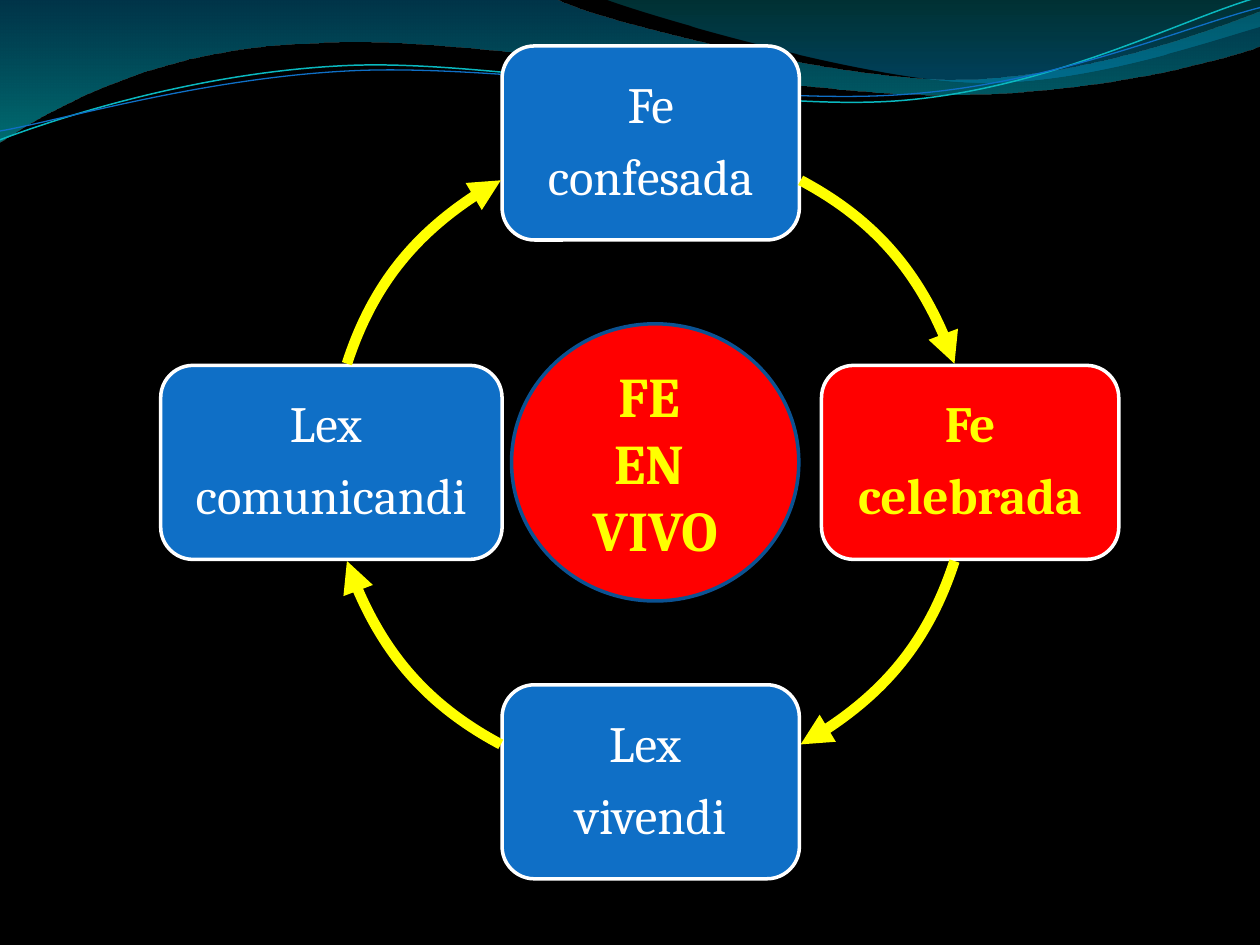
from dataclasses import dataclass
from math import cos, radians, sin, tan

from lxml.etree import SubElement
from pptx import Presentation
from pptx.dml.color import RGBColor as RGB
from pptx.enum.shapes import MSO_SHAPE as SHAPE
from pptx.enum.text import MSO_ANCHOR as ANCHOR, PP_ALIGN as ALIGN
from pptx.oxml.ns import qn
from pptx.util import Inches, Pt


@dataclass(frozen=True)
class Theme:
    font: str = "Cambria"
    back: str = "000000"
    blue: str = "0F6FC6"
    navy: str = "0B5292"
    teal: str = "0AB8BF"
    red: str = "FF0000"
    yellow: str = "FFFF00"
    white: str = "FFFFFF"
    box_size: float = 29
    hub_size: float = 32
    outline: float = 2
    arrow: float = 6


COLS, ROWS = 100, 75
CENTER = (51.65, 36.7)
RADIUS = 25.35
RING = (CENTER[0] - RADIUS, CENTER[1] - RADIUS, 2 * RADIUS, 2 * RADIUS)


def on_ring(degrees, pull=0):
    a = radians(degrees)
    return (CENTER[0] + RADIUS * (cos(a) - pull * sin(a)),
            CENTER[1] + RADIUS * (sin(a) + pull * cos(a)))


def ring_arc(start, sweep):
    pull = 4 / 3 * tan(radians(sweep) / 4)
    end = start + sweep
    return [on_ring(start),
            (*on_ring(start, pull), *on_ring(end, -pull), *on_ring(end))]


def turn(point, center, degrees):
    a = radians(degrees)
    dx, dy = point[0] - center[0], point[1] - center[1]
    return (center[0] + dx * cos(a) - dy * sin(a),
            center[1] + dx * sin(a) + dy * cos(a))


class Canvas:
    def __init__(self, prs, theme):
        self.theme = theme
        self.cell_w = prs.slide_width / COLS
        self.cell_h = prs.slide_height / ROWS
        self.slide = prs.slides.add_slide(prs.slide_layouts[6])
        fill = self.slide.background.fill
        fill.solid()
        fill.fore_color.rgb = RGB.from_string(theme.back)

    def emu(self, col, row):
        return round(col * self.cell_w), round(row * self.cell_h)

    def outline(self, sp, color, width):
        sp.line.color.rgb = RGB.from_string(color)
        sp.line.width = Pt(width)

    def freeform(self, frame, segments, closed=False, rotation=0):
        left, top, width, height = frame
        builder = self.slide.shapes.build_freeform(*self.emu(left, top))
        builder.add_line_segments([self.emu(left + width, top + height)], close=False)
        sp = builder.convert_to_shape()
        sp.shadow.inherit = False
        sp.rotation = rotation
        center = (left + width / 2, top + height / 2)
        outline = sp._element.find(".//" + qn("a:path"))
        for child in list(outline):
            outline.remove(child)
        for i, seg in enumerate(segments):
            tag = "a:moveTo" if i == 0 else "a:lnTo" if len(seg) == 2 else "a:cubicBezTo"
            step = SubElement(outline, qn(tag))
            for point in zip(seg[::2], seg[1::2]):
                col, row = turn(point, center, -rotation)
                x, y = self.emu(col - left, row - top)
                SubElement(step, qn("a:pt"), x=str(x), y=str(y))
        if closed:
            SubElement(outline, qn("a:close"))
        return sp

    def wave(self, frame, segments, stops):
        sp = self.freeform(frame, segments, closed=True)
        sp.fill.gradient()
        sp.fill.gradient_angle = 270
        for stop, (position, color, _) in zip(sp.fill.gradient_stops, stops):
            stop.position = position
            stop.color.rgb = RGB.from_string(color)
        for clr, (_, _, alpha) in zip(sp._element.iter(qn("a:srgbClr")), stops):
            SubElement(clr, qn("a:alpha"), val=str(alpha * 1000))
        sp.line.fill.background()

    def curve(self, frame, segments, color, width, rotation=0, arrow=False):
        sp = self.freeform(frame, segments, rotation=rotation)
        sp.fill.background()
        self.outline(sp, color, width)
        if arrow:
            SubElement(sp.line._get_or_add_ln(), qn("a:tailEnd"), type="triangle")

    def node(self, kind, center, size, lines, fill, line, color, pt, bold,
             inset=0.1, spacing=None, after=None):
        corner = [c - s / 2 for c, s in zip(center, size)]
        sp = self.slide.shapes.add_shape(kind, *self.emu(*corner), *self.emu(*size))
        sp.shadow.inherit = False
        sp.fill.solid()
        sp.fill.fore_color.rgb = RGB.from_string(fill)
        self.outline(sp, line, self.theme.outline)
        tf = sp.text_frame
        tf.word_wrap = True
        tf.vertical_anchor = ANCHOR.MIDDLE
        tf.margin_left = tf.margin_right = Inches(inset)
        tf.margin_top = tf.margin_bottom = Inches(inset)
        for i, text in enumerate(lines):
            p = tf.add_paragraph() if i else tf.paragraphs[0]
            p.text = text
            p.alignment = ALIGN.CENTER
            p.line_spacing = spacing
            p.space_after = after
            p.font.name = self.theme.font
            p.font.size = Pt(pt)
            p.font.bold = bold
            p.font.color.rgb = RGB.from_string(color)

    def box(self, center, width, lines, active):
        t = self.theme
        self.node(SHAPE.ROUNDED_RECTANGLE, center, (width, 15.4), lines,
                  t.red if active else t.blue, t.white,
                  t.yellow if active else t.white, t.box_size, active,
                  inset=0.2, spacing=0.9, after=Pt(10))

    def hub(self, center, size, lines):
        t = self.theme
        self.node(SHAPE.OVAL, center, size, lines, t.red, t.navy, t.yellow,
                  t.hub_size, True)


WAVES = [
    ((-0.1, -0.1, 100.2, 11.4),
     [(0, 0), (44, -0.1), (47.6, 1.7, 66.4, 6.3, 75.8, 6.3),
      (85.3, 6.3, 95.8, 2.6, 100, 0.9), (100.1, 3.6),
      (98.3, 4.4, 87, 7.6, 74.6, 7.5), (62.2, 7.5, 38.2, 2.8, 25.7, 3.4),
      (12.9, 3.6, 4.6, 8.3, -0.1, 11.3), (0, 0)],
     [(0, "0074A1", 45), (1, "00C6CF", 55)]),
    ((47.9, -0.1, 52.1, 7),
     [(47.9, -0.1), (50.9, 1.1, 68.2, 6.2, 76.9, 6.5),
      (85.6, 6.9, 96.1, 3.2, 100, 2.1), (100, 0), (47.9, -0.1)],
     [(0, "00A1A9", 30), (0.8, "008BBF", 45)]),
]
STRAND_TILT = -2.7
STRANDS = [
    ((-0.2, 2.2, 100.2, 7.1),
     [(0, 11.1), (4.8, 9.3, 15.8, 5.7, 27.7, 5.2),
      (39.5, 4.7, 59.3, 8.9, 71.3, 8), (83.3, 7.1, 93.8, 1.5, 99.8, -0.2)],
     Theme.teal, 0.85),
    ((-0.2, 3, 100.3, 5.8),
     [(0, 10.4), (4.7, 9.6, 16.4, 6.1, 28.3, 5.6),
      (40.3, 5.1, 59.7, 8.4, 71.7, 7.5), (83.6, 6.7, 94.1, 2.1, 100, 0.6)],
     Theme.blue, 0.75),
]
STAGES = [
    (-90, 23.6, ["Fe", "confesada"], False),
    (0, 23.6, ["Fe", "celebrada"], True),
    (90, 23.6, ["Lex ", "vivendi"], False),
    (180, 27.1, ["Lex ", "comunicandi"], False),
]
ARC_STARTS = [-62, 18, 118, 198]
ARC_SWEEP = 44


def main():
    prs = Presentation()
    prs.slide_width, prs.slide_height = Inches(10), Inches(7.5)
    theme = Theme()
    s = Canvas(prs, theme)
    for frame, segments, stops in WAVES:
        s.wave(frame, segments, stops)
    for frame, segments, color, width in STRANDS:
        s.curve(frame, segments, color, width, rotation=STRAND_TILT)
    for (angle, width, lines, active), start in zip(STAGES, ARC_STARTS):
        s.box(on_ring(angle), width, lines, active)
        s.curve(RING, ring_arc(start, ARC_SWEEP), theme.yellow, theme.arrow, arrow=True)
    s.hub((52, 36.7), (22.8, 22), ["FE ", "EN ", "VIVO"])
    prs.save("out.pptx")


if __name__ == "__main__":
    main()
